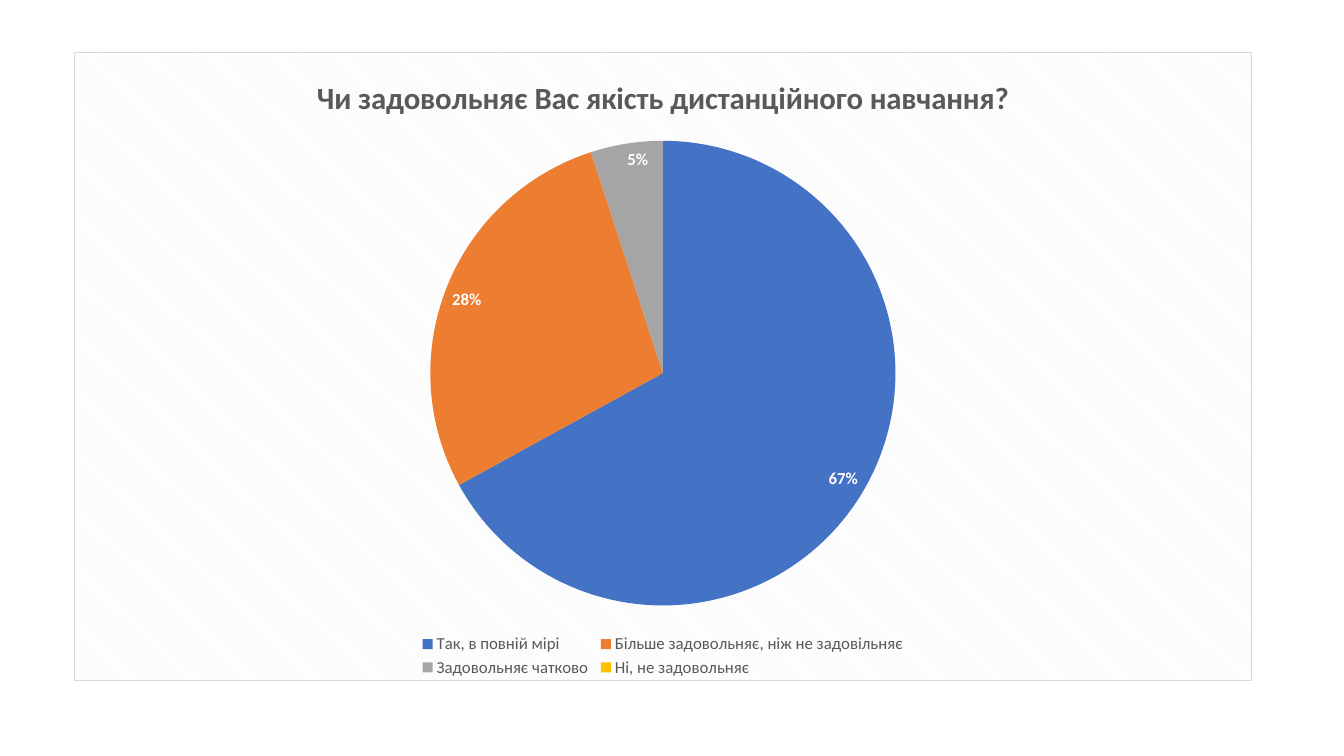
from lxml import etree
from pptx import Presentation
from pptx.chart.data import CategoryChartData as Data
from pptx.dml.color import RGBColor as Rgb
from pptx.enum.chart import XL_CHART_TYPE as Kind
from pptx.enum.chart import XL_LABEL_POSITION as Spot
from pptx.enum.chart import XL_LEGEND_POSITION as Side
from pptx.oxml import parse_xml
from pptx.oxml.ns import nsdecls, qn
from pptx.util import Inches, Pt

HEX = {"text": "595959", "label": "FFFFFF", "edge": "D9D9D9",
       "hatch": "F2F2F2", "back": "FFFFFF"}
TITLE = "Чи задовольняє Вас якість дистанційного навчання?"
SLICES = [
    ("Так, в повній мірі", 67, "4472C4"),
    ("Більше задовольняє, ніж не задовільняє", 28, "ED7D31"),
    ("Задовольняє чатково", 5, "A5A5A5"),
    ("Ні, не задовольняє", 0, "FFC000"),
]


def style(font, size, tint, bold=False):
    looks = {"name": "Calibri", "size": Pt(size), "bold": bold}
    for key, value in looks.items():
        setattr(font, key, value)
    font.color.rgb = Rgb.from_string(HEX[tint])


def place(part, index, target, **box):
    """Give a chart part a fixed box, in fractions of the chart."""
    for old in part.findall(qn("c:layout")):
        part.remove(old)
    layout = etree.Element(qn("c:layout"))
    manual = etree.SubElement(layout, qn("c:manualLayout"))
    modes = {"xMode": "edge", "yMode": "edge"}
    if target:
        modes = {"layoutTarget": target, **modes}
    for key, value in {**modes, **box}.items():
        etree.SubElement(manual, qn("c:" + key)).set("val", str(value))
    part.insert(index, layout)


def add_frame(chart):
    """Fill the chart area with a hatch and outline it."""
    frame = parse_xml(
        f'<c:spPr {nsdecls("c", "a")}><a:pattFill prst="dkDnDiag">'
        f'<a:fgClr><a:srgbClr val="{HEX["hatch"]}"/></a:fgClr>'
        f'<a:bgClr><a:srgbClr val="{HEX["back"]}"/></a:bgClr></a:pattFill>'
        f'<a:ln w="{Pt(0.75)}"><a:solidFill><a:srgbClr val="{HEX["edge"]}"/>'
        '</a:solidFill></a:ln></c:spPr>')
    chart.element.find(qn("c:chart")).addnext(frame)


def add_title(chart):
    chart.has_title = True
    frame = chart.chart_title.text_frame
    frame.text = TITLE
    style(frame.paragraphs[0].runs[0].font, 22, "text", True)
    chart.chart_title.include_in_layout = False


def add_legend(chart):
    chart.has_legend = True
    legend = chart.legend
    legend.position = Side.BOTTOM
    legend.include_in_layout = False
    style(legend.font, 12, "text")
    place(chart.element.find(".//" + qn("c:legend")), 1, None,
          x=0.29, y=0.92, w=0.42, h=0.08)


def add_labels(chart, series):
    """Show percentages, leaving out the empty slices."""
    labels = series.data_labels
    looks = {"show_percentage": True, "show_value": False,
             "number_format": "0%", "number_format_is_linked": False,
             "position": Spot.INSIDE_END}
    for key, value in looks.items():
        setattr(labels, key, value)
    style(labels.font, 12, "label", True)
    group = chart.element.find(".//" + qn("c:ser") + "/" + qn("c:dLbls"))
    empty = [i for i, (_, value, _) in enumerate(SLICES) if not value]
    for rank, index in enumerate(empty):
        group.insert(rank, parse_xml(
            f'<c:dLbl {nsdecls("c")}><c:idx val="{index}"/>'
            '<c:delete val="1"/></c:dLbl>'))


def add_pie(slide):
    data = Data()
    data.categories = [name for name, _, _ in SLICES]
    data.add_series(TITLE, [value for _, value, _ in SLICES])
    chart = slide.shapes.add_chart(
        Kind.PIE, Inches(0.73), Inches(0.52), Inches(11.69), Inches(6.24),
        data).chart
    chart.font.name = "Calibri"
    chart.font.size = Pt(10)
    plot = chart.plots[0]
    plot.vary_by_categories = True
    series = plot.series[0]
    for index, (_, _, tint) in enumerate(SLICES):
        form = series.points[index].format
        form.fill.solid()
        form.fill.fore_color.rgb = Rgb.from_string(tint)
        form.line.fill.background()
    add_frame(chart)
    add_title(chart)
    add_legend(chart)
    add_labels(chart, series)
    place(chart.element.find(".//" + qn("c:plotArea")), 0, "inner",
          x=0.3, y=0.14, w=0.4, h=0.74)


def main():
    deck = Presentation()
    deck.slide_width = Inches(13.33)
    deck.slide_height = Inches(7.5)
    add_pie(deck.slides.add_slide(deck.slide_layouts[6]))
    deck.save("out.pptx")


if __name__ == "__main__":
    main()
